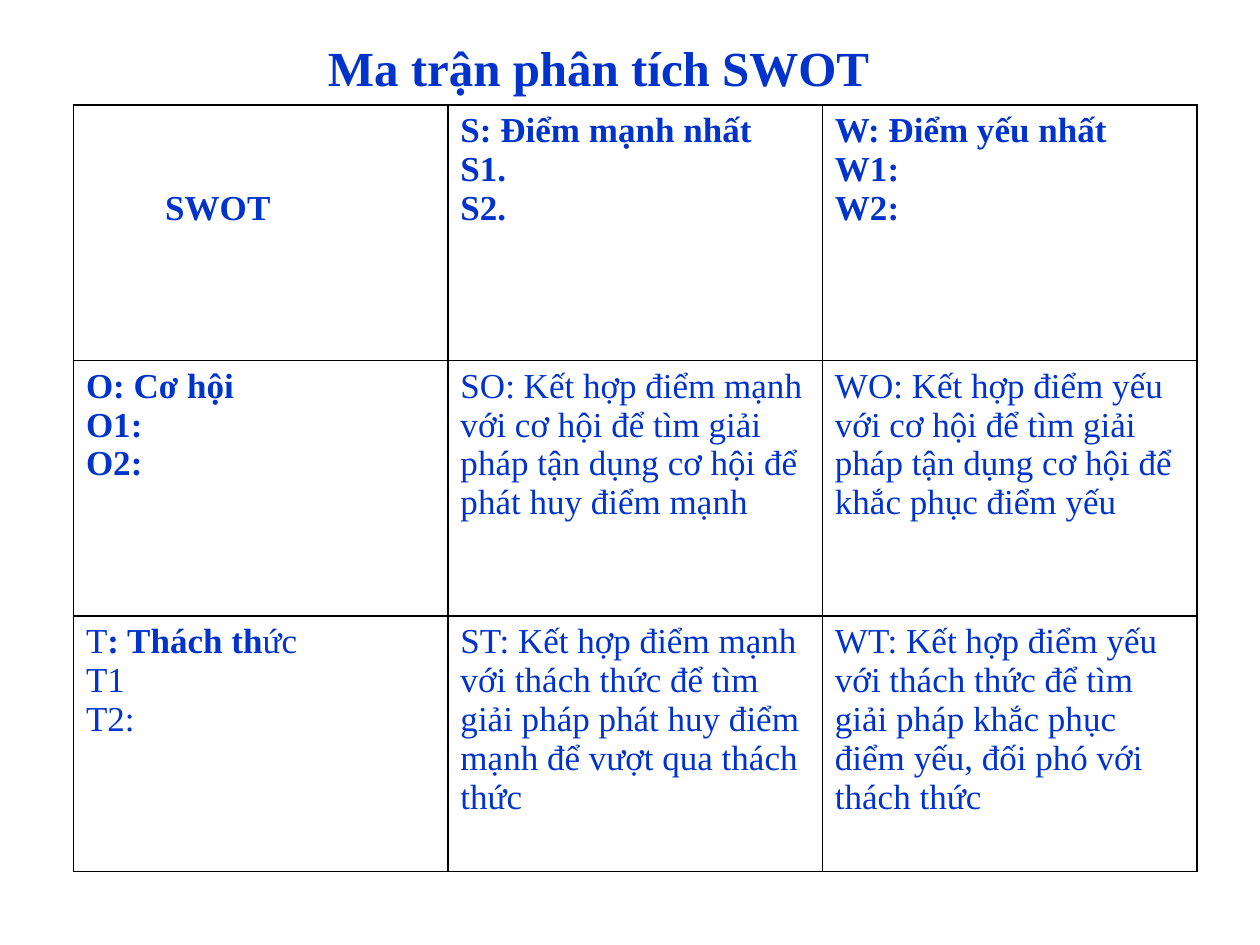
from lxml import etree
from pptx import Presentation
from pptx.dml.color import RGBColor
from pptx.enum import text
from pptx.oxml.ns import qn
from pptx.util import Cm, Pt

FONT = "Times New Roman"
BLUE = "0033CC"
BLACK = "000000"
WHITE = "FFFFFF"

MATRIX = [
    [
        [[("SWOT", True)]],
        [[("S: Điểm mạnh nhất", True)], [("S1.", True)], [("S2.", True)]],
        [[("W: Điểm yếu nhất", True)], [("W1:", True)], [("W2:", True)]],
    ],
    [
        [[("O: Cơ hội", True)], [("O1:", True)], [("O2:", True)]],
        [[("SO: Kết hợp điểm mạnh với cơ hội để tìm giải pháp "
           "tận dụng cơ hội để phát huy điểm mạnh", False)]],
        [[("WO: Kết hợp điểm yếu với cơ hội để tìm giải pháp "
           "tận dụng cơ hội để khắc phục điểm yếu", False)]],
    ],
    [
        [[("T", False), (": Thách th", True), ("ức", False)],
         [("T1", False)], [("T2:", False)]],
        [[("ST: Kết hợp điểm mạnh với thách thức để tìm giải pháp "
           "phát huy điểm mạnh để vượt qua thách thức", False)]],
        [[("WT: Kết hợp điểm yếu với thách thức để tìm giải pháp "
           "khắc phục điểm yếu, đối phó với thách thức", False)]],
    ],
]


def color(value):
    return RGBColor.from_string(value)


def add_run(p, words, size, bold):
    r = p.add_run()
    r.text = words
    r.font.name = FONT
    r.font.size = Pt(size)
    r.font.bold = bold
    r.font.color.rgb = color(BLUE)


def set_borders(cell, width=1):
    tcPr = cell._tc.get_or_add_tcPr()
    for side in ("a:lnL", "a:lnR", "a:lnT", "a:lnB"):
        ln = etree.SubElement(tcPr, qn(side), w=str(Pt(width)))
        fill = etree.SubElement(ln, qn("a:solidFill"))
        etree.SubElement(fill, qn("a:srgbClr"), val=BLACK)


def fill_cell(cell, paragraphs):
    set_borders(cell)
    cell.fill.solid()
    cell.fill.fore_color.rgb = color(WHITE)
    tf = cell.text_frame
    for i, runs in enumerate(paragraphs):
        p = tf.add_paragraph() if i else tf.paragraphs[0]
        for words, bold in runs:
            add_run(p, words, 20, bold)


def add_title(s, left, top, width, height):
    tf = s.shapes.add_textbox(left, top, width, height).text_frame
    tf.word_wrap = True
    p = tf.paragraphs[0]
    p.alignment = text.PP_ALIGN.CENTER
    add_run(p, "Ma trận phân tích SWOT", 28, True)


def add_matrix(s, left, top, width, height):
    rows, cols = len(MATRIX), len(MATRIX[0])
    table = s.shapes.add_table(rows, cols, left, top, width, height).table
    for i, row in enumerate(MATRIX):
        for j, paragraphs in enumerate(row):
            fill_cell(table.cell(i, j), paragraphs)
    corner = table.cell(0, 0)
    corner.margin_left = Cm(1.85)
    corner.margin_top = Cm(1.69)


def main():
    prs = Presentation()
    prs.slide_width, prs.slide_height = Cm(25.4), Cm(19.05)
    s = prs.slides.add_slide(prs.slide_layouts[6])
    add_matrix(s, Cm(1.48), Cm(2.12), Cm(22.65), Cm(15.45))
    add_title(s, Cm(1.48), Cm(0.64), Cm(21.17), Cm(1.45))
    prs.save("out.pptx")


if __name__ == "__main__":
    main()
